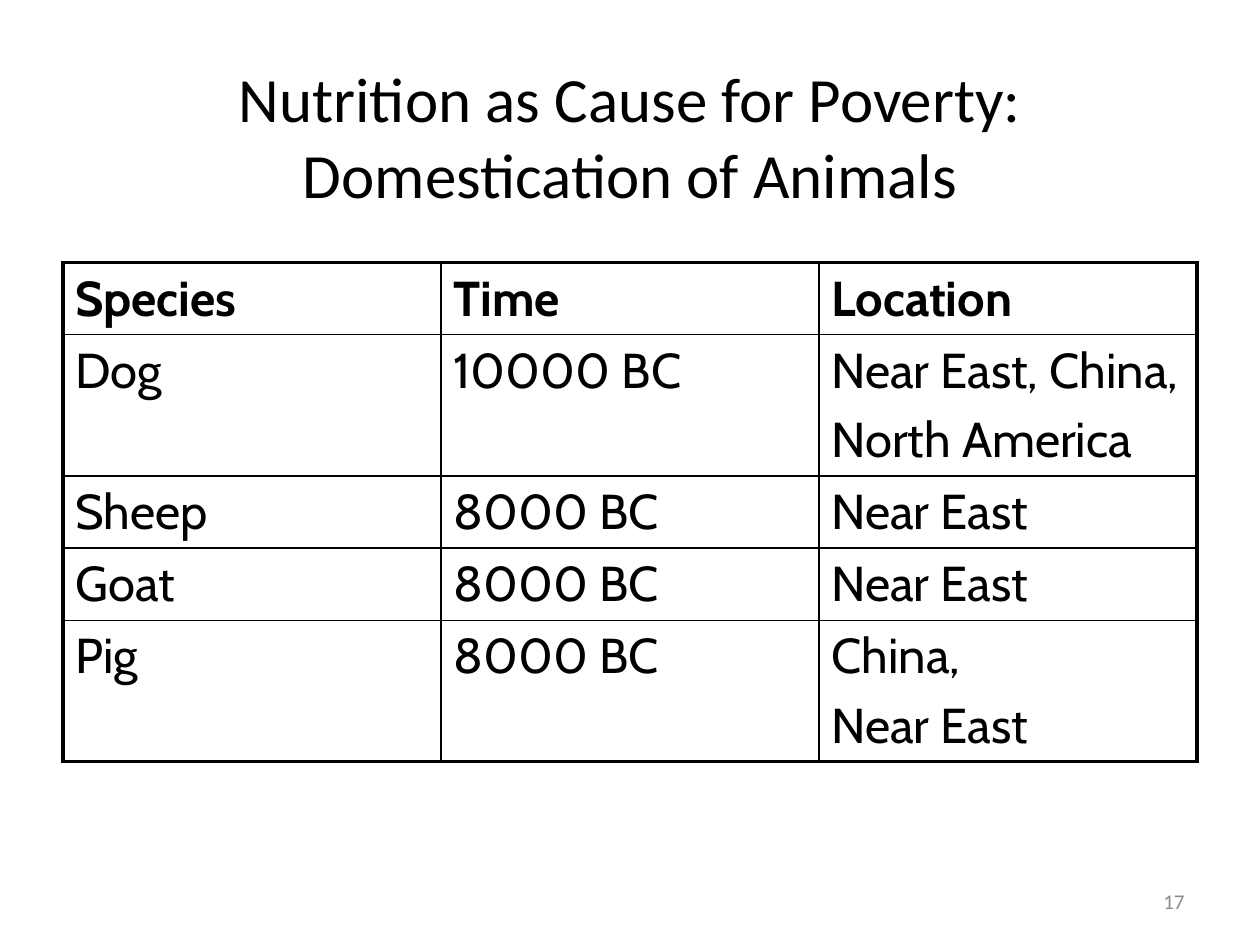
import pptx
import pptx.util
import pptx.dml.color
import pptx.enum.text
import pptx.oxml
import pptx.oxml.ns
from dataclasses import dataclass

Pt = pptx.util.Pt
Align = pptx.enum.text.PP_ALIGN
Anchor = pptx.enum.text.MSO_ANCHOR

TITLE = "Nutrition as Cause for Poverty: Domestication of Animals"
PAGE_NUMBER = "17"
ROWS = [
    ("Species", "Time", "Location"),
    ("Dog", "10000 BC", "Near East, China,\nNorth America"),
    ("Sheep", "8000 BC", "Near East"),
    ("Goat", "8000 BC", "Near East"),
    ("Pig", "8000 BC", "China,\nNear East"),
]


@dataclass(frozen=True)
class Theme:
    ink: str = "000000"
    muted: str = "8C8C8C"
    heading_font: str = "Calibri"
    table_font: str = "Cabin"
    title_size: float = 36
    table_size: float = 28
    number_size: float = 12
    outer_line: float = 2.25
    inner_line: float = 1


THEME = Theme()
TITLE_BOX = (36, 23, 648, 109)
NUMBER_BOX = (516, 500.5, 168, 28.8)
TABLE_LEFT, TABLE_TOP, COLUMN_WIDTH = 36, 150, 216
ONE_LINE_ROW, EXTRA_LINE = 41.2, 39.6
PARAGRAPH_GAP = 0.2 * THEME.table_size


def write(frame, text, *, font, size, color=THEME.ink, bold=False,
          align=Align.LEFT, anchor=Anchor.TOP, gap=0):
    """Fill a text frame, one paragraph per line, with gap points between them."""
    frame.word_wrap = True
    frame.vertical_anchor = anchor
    for index, line in enumerate(text.split("\n")):
        para = frame.add_paragraph() if index else frame.paragraphs[0]
        para.alignment = align
        if index and gap:
            para.space_before = Pt(gap)
        span = para.add_run()
        span.text = line
        span.font.name = font
        span.font.size = Pt(size)
        span.font.bold = bold
        span.font.color.rgb = pptx.dml.color.RGBColor.from_string(color)


def set_borders(cell, widths):
    properties = cell._tc.get_or_add_tcPr()
    namespace = pptx.oxml.ns.nsdecls("a")
    for index, (side, width) in enumerate(widths.items()):
        line = pptx.oxml.parse_xml(
            f'<a:ln{side} {namespace} w="{int(Pt(width))}"><a:solidFill>'
            f'<a:srgbClr val="{THEME.ink}"/></a:solidFill></a:ln{side}>')
        properties.insert(index, line)


def add_species_table(page):
    heights = [ONE_LINE_ROW + EXTRA_LINE * max(text.count("\n") for text in row)
               for row in ROWS]
    columns = len(ROWS[0])
    table = page.shapes.add_table(
        len(ROWS), columns, Pt(TABLE_LEFT), Pt(TABLE_TOP),
        Pt(COLUMN_WIDTH * columns), Pt(sum(heights))).table
    table.horz_banding = False
    for column in table.columns:
        column.width = Pt(COLUMN_WIDTH)

    def edge(is_outer):
        return THEME.outer_line if is_outer else THEME.inner_line

    for r, (row, height) in enumerate(zip(ROWS, heights)):
        table.rows[r].height = Pt(height)
        for c, text in enumerate(row):
            cell = table.cell(r, c)
            cell.fill.background()
            cell.vertical_anchor = Anchor.TOP
            write(cell.text_frame, text, font=THEME.table_font,
                  size=THEME.table_size, bold=r == 0, gap=PARAGRAPH_GAP)
            set_borders(cell, {"L": edge(c == 0), "R": edge(c == columns - 1),
                               "T": edge(r == 0), "B": edge(r == len(ROWS) - 1)})


def main():
    deck = pptx.Presentation()
    deck.slide_width, deck.slide_height = Pt(720), Pt(540)
    page = deck.slides.add_slide(deck.slide_layouts.get_by_name("Title Only"))

    title = page.shapes.title
    title.left, title.top, title.width, title.height = map(Pt, TITLE_BOX)
    title.text_frame.auto_size = pptx.enum.text.MSO_AUTO_SIZE.NONE
    write(title.text_frame, TITLE, font=THEME.heading_font,
          size=THEME.title_size, align=Align.CENTER, anchor=Anchor.MIDDLE)

    add_species_table(page)

    number_box = page.shapes.add_textbox(*map(Pt, NUMBER_BOX))
    write(number_box.text_frame, PAGE_NUMBER, font=THEME.heading_font,
          size=THEME.number_size, color=THEME.muted,
          align=Align.RIGHT, anchor=Anchor.MIDDLE)

    deck.save("out.pptx")


if __name__ == "__main__":
    main()
